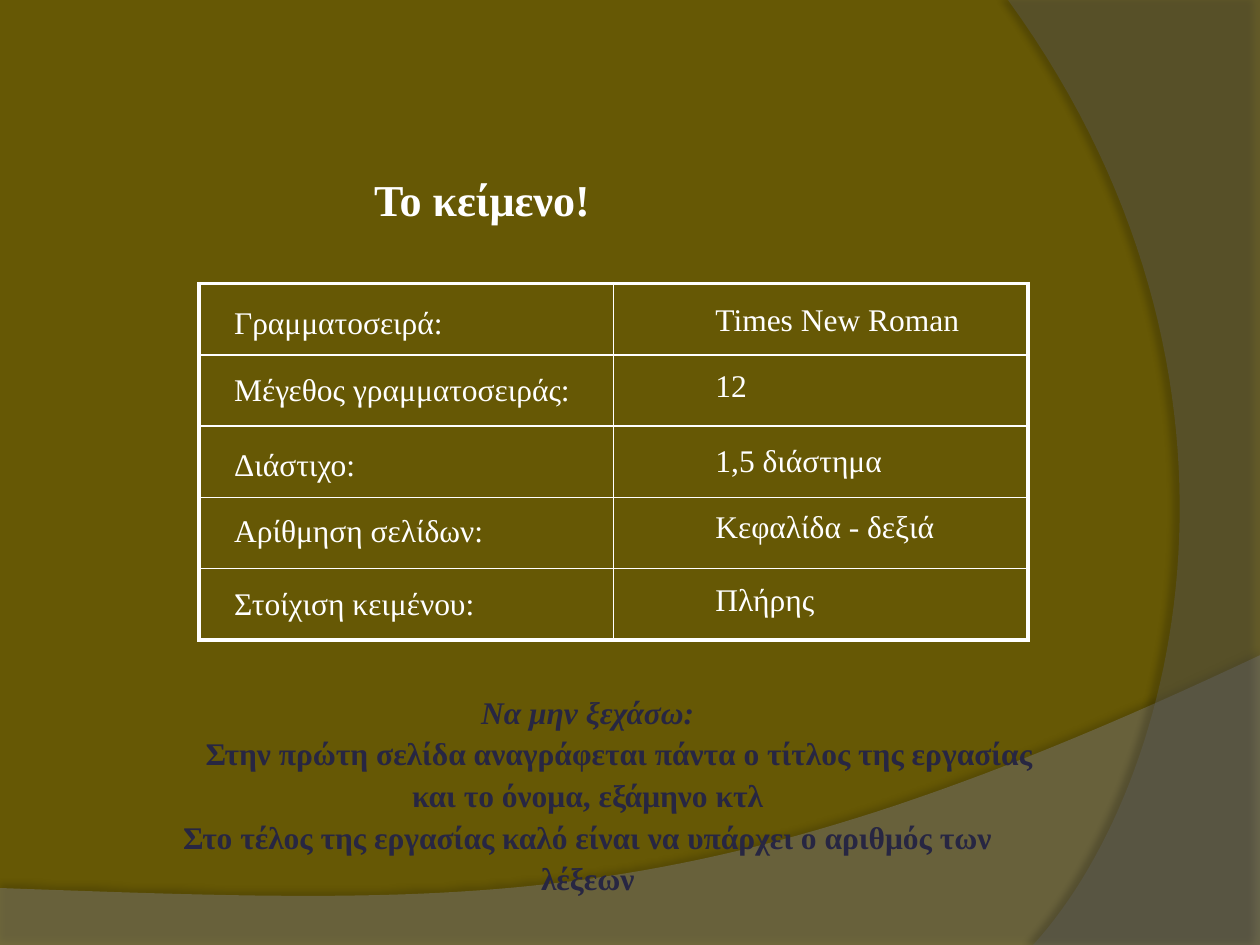
from lxml import etree
from pptx import Presentation
from pptx.dml.color import RGBColor
from pptx.enum.text import MSO_ANCHOR, MSO_AUTO_SIZE, PP_ALIGN
from pptx.oxml import parse_xml
from pptx.oxml.ns import nsdecls, qn
from pptx.util import Inches, Pt

# The slide is a grid of 10 columns by 7.5 rows, one inch each
COLUMNS, ROWS = 10, 7.5
FONT = "Times New Roman"
COLORS = {
    "background": "665805",
    "wave": "7F7F7F",
    "arc": "5E5E5E",
    "light": "FFFFFF",
    "note": "272642",
    "shadow": "000000",
}
OUTER, INNER = 2.25, 1  # border widths in points

# Label, label width, value, value width, text offset from the row top
SETTINGS = [
    ("Γραμματοσειρά:", 1.86, "Times New Roman", 2.15, 0.11),
    ("Μέγεθος γραμματοσειράς:", 2.87, "12", 0.45, 0.07),
    ("Διάστιχο:", 1.17, "1,5 διάστημα", 1.52, 0.1),
    ("Αρίθμηση σελίδων:", 2.18, "Κεφαλίδα - δεξιά", 1.94, 0.06),
    ("Στοίχιση κειμένου:", 2.11, "Πλήρης", 0.99, 0.07),
]
NOTES = [
    dict(text="Να μην ξεχάσω:", italic=True),
    dict(text="Στην πρώτη σελίδα αναγράφεται πάντα ο τίτλος της εργασίας "
              "και το όνομα, εξάμηνο κτλ", indent=0.5),
    dict(text="Στο τέλος της εργασίας καλό είναι να υπάρχει ο αριθμός των λέξεων"),
]


def color(name):
    return RGBColor.from_string(COLORS[name])


def write(paragraph, text, size=18, ink="light", bold=False, italic=False,
          align=PP_ALIGN.LEFT, spacing=None, indent=0):
    paragraph.alignment = align
    if spacing:
        paragraph.line_spacing = spacing
    if indent:
        properties = paragraph._p.get_or_add_pPr()
        properties.set("marL", "0")
        properties.set("indent", str(Inches(indent)))
    run = paragraph.add_run()
    run.text = text
    font = run.font
    font.name, font.size, font.bold, font.italic = FONT, Pt(size), bold, italic
    font.color.rgb = color(ink)


def add_frame(slide, box, wrap=True):
    frame = slide.shapes.add_textbox(*map(Inches, box)).text_frame
    frame.word_wrap = wrap
    frame.auto_size = MSO_AUTO_SIZE.SHAPE_TO_FIT_TEXT
    return frame


def bezier(start, control1, control2, end, steps=60):
    for step in range(1, steps + 1):
        t = step / steps
        weights = ((1 - t) ** 3, 3 * t * (1 - t) ** 2, 3 * t ** 2 * (1 - t), t ** 3)
        yield tuple(sum(w * p for w, p in zip(weights, axis))
                    for axis in zip(start, control1, control2, end))


def add_swoosh(slide, box, corners, curve, fill, alpha, shadow):
    """Draw straight corners closed by one curve, as shares of the box."""
    left, top, width, height = box
    points = [(Inches(left + x * width), Inches(top + y * height))
              for x, y in [*corners, *bezier(corners[-1], *curve)]]
    builder = slide.shapes.build_freeform(*points[0])
    builder.add_line_segments(points[1:], close=True)
    swoosh = builder.convert_to_shape()
    swoosh.fill.solid()
    swoosh.fill.fore_color.rgb = color(fill)
    swoosh.line.fill.background()
    swoosh.shadow.inherit = False
    properties = swoosh._element.spPr
    tint = properties.find(qn("a:solidFill"))[0]
    etree.SubElement(tint, qn("a:alpha"), val=str(alpha * 1000))
    opacity, blur, distance, angle = shadow
    properties.find(qn("a:effectLst")).append(parse_xml(
        f'<a:outerShdw {nsdecls("a")} blurRad="{Pt(blur)}" dist="{Pt(distance)}" '
        f'dir="{angle * 60000}" algn="ctr" rotWithShape="0">'
        f'<a:srgbClr val="{COLORS["shadow"]}"><a:alpha val="{opacity * 1000}"/>'
        f'</a:srgbClr></a:outerShdw>'))


def add_backdrop(slide):
    slide.background.fill.solid()
    slide.background.fill.fore_color.rgb = color("background")
    # Wave along the bottom
    add_swoosh(slide, (0, 5.2, COLUMNS, 2.31),
               [(0, 0.8), (0, 1), (1, 1), (1, 0)],
               [(0.56, 0.9), (0.39, 0.86), (0, 0.8)],
               "wave", 45, (35, 4, 3.5, 270))
    # Arc down the right side
    add_swoosh(slide, (8, 0, 2, ROWS),
               [(1, 0), (1, 1), (0.1, 1)],
               [(0.68, 0.83), (1.09, 0.4), (0, 0)],
               "arc", 40, (45, 4, 4, 180))


def add_title(slide, box):
    frame = add_frame(slide, box)
    frame.auto_size = MSO_AUTO_SIZE.NONE
    frame.vertical_anchor = MSO_ANCHOR.MIDDLE
    frame.margin_left = frame.margin_right = Inches(0.05)
    write(frame.paragraphs[0], "Το κείμενο!", size=25.2, bold=True)


def set_borders(cell, **widths):
    properties = cell._tc.get_or_add_tcPr()
    for position, (side, width) in enumerate(widths.items()):
        properties.insert(position, parse_xml(
            f'<a:{side} {nsdecls("a")} w="{Pt(width)}"><a:solidFill>'
            f'<a:srgbClr val="{COLORS["light"]}"/></a:solidFill></a:{side}>'))


def add_settings(slide, box):
    left, top, width, height = box
    count = len(SETTINGS)
    row_height, column_width = height / count, width / 2

    # Ruled grid
    table = slide.shapes.add_table(count, 2, *map(Inches, box)).table
    table.first_row = table.horz_banding = False
    for row in range(count):
        for column in range(2):
            cell = table.cell(row, column)
            cell.fill.background()
            set_borders(cell,
                        lnL=OUTER if column == 0 else INNER,
                        lnR=OUTER if column == 1 else INNER,
                        lnT=OUTER if row == 0 else INNER,
                        lnB=OUTER if row == count - 1 else INNER)

    # Labels and values, the values a little higher
    for row, (label, label_width, value, value_width, offset) in enumerate(SETTINGS):
        y = top + row * row_height + offset
        for text, x, text_width, rise in (
                (label, left + 0.18, label_width, 0),
                (value, left + column_width + 0.71, value_width, 0.03)):
            frame = add_frame(slide, (x, y - rise, text_width, 0.4), wrap=False)
            write(frame.paragraphs[0], text)


def add_reminder(slide, box):
    frame = add_frame(slide, box)
    for number, note in enumerate(NOTES):
        paragraph = frame.add_paragraph() if number else frame.paragraphs[0]
        write(paragraph, **note, ink="note", bold=True,
              align=PP_ALIGN.CENTER, spacing=1.1)


def main():
    presentation = Presentation()
    presentation.slide_width = Inches(COLUMNS)
    presentation.slide_height = Inches(ROWS)
    slide = presentation.slides.add_slide(presentation.slide_layouts[6])
    add_backdrop(slide)
    add_title(slide, (2.92, 1.33, 3.58, 0.5))
    add_settings(slide, (1.58, 2.25, 6.58, 2.83))
    add_reminder(slide, (1, 5.42, 7.33, 1.77))
    presentation.save("out.pptx")


if __name__ == "__main__":
    main()
